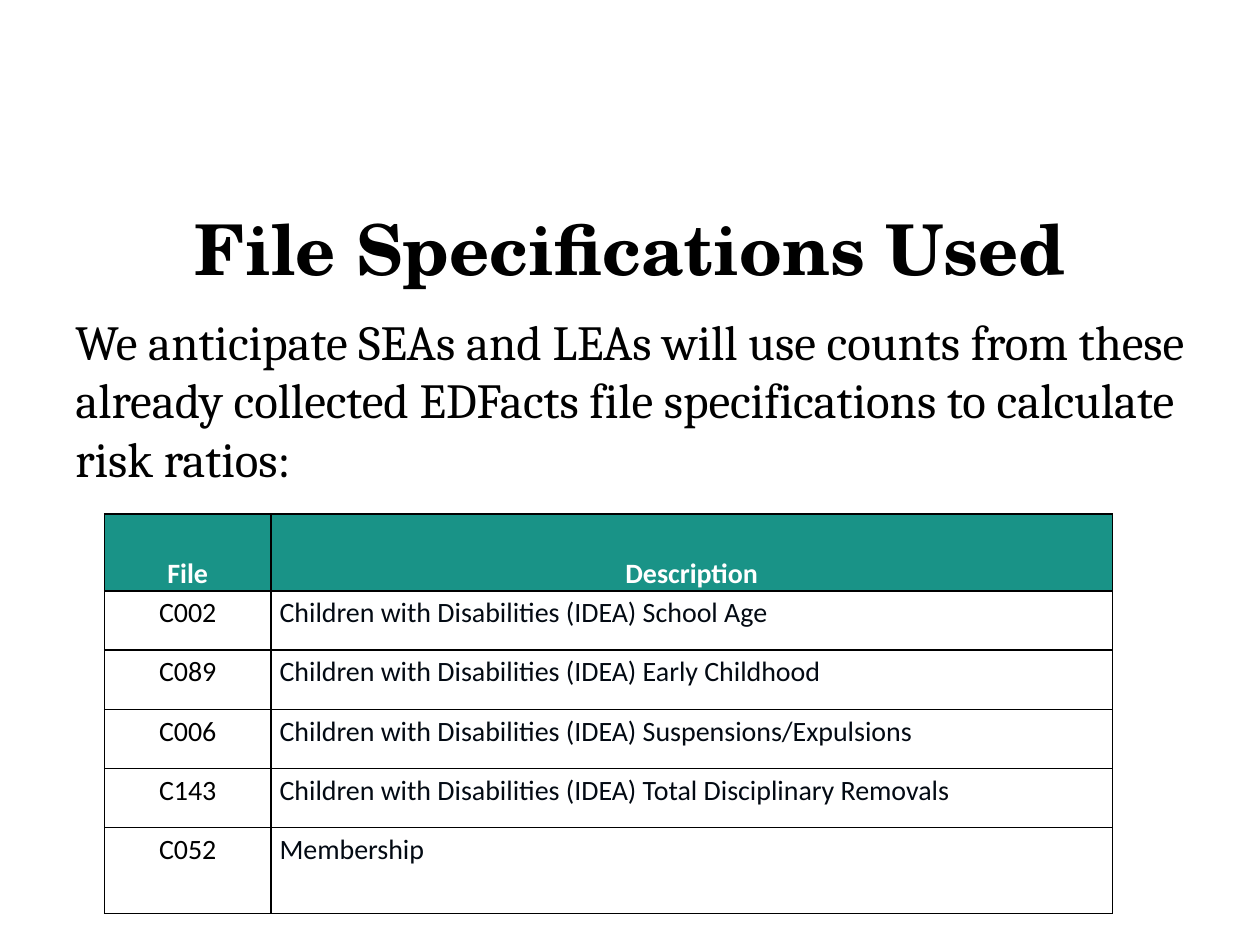
from dataclasses import dataclass

from lxml.etree import SubElement
from pptx import Presentation
from pptx.dml.color import RGBColor
from pptx.enum.text import MSO_ANCHOR, PP_ALIGN
from pptx.oxml.ns import qn
from pptx.util import Inches, Pt


@dataclass
class Style:
    """Hold the look of a run of text."""
    font: str
    size: int
    color: str
    bold: bool = False


@dataclass
class Entry:
    """Hold one file and what it covers."""
    code: str
    about: str


IDEA = "Children with Disabilities (IDEA) "
FILES = [
    Entry("C002", IDEA + "School Age"),
    Entry("C089", IDEA + "Early Childhood"),
    Entry("C006", IDEA + "Suspensions/Expulsions"),
    Entry("C143", IDEA + "Total Disciplinary Removals"),
    Entry("C052", "Membership"),
]
WIDTHS = [1.32, 6.68]
HEIGHTS = [0.61, 0.47, 0.47, 0.47, 0.47, 0.68]
HEAD = Style("Calibri", 16, "FFFFFF", True)
CODE = Style("Calibri", 16, "000000")
ABOUT = Style("Calibri", 16, "030A13")


def rgb(color: str) -> RGBColor:
    """Turn a hex string into a colour."""
    return RGBColor.from_string(color)


def write(para, text: str, style: Style, align=PP_ALIGN.LEFT) -> None:
    """Add one styled run to a paragraph."""
    para.alignment = align
    run = para.add_run()
    run.text = text
    font = run.font
    font.name, font.size, font.bold = style.font, Pt(style.size), style.bold
    font.color.rgb = rgb(style.color)


def add_text(slide, text: str, style: Style, top: float, height: float,
             align=PP_ALIGN.LEFT) -> None:
    """Add a wrapped text box across the slide."""
    box = slide.shapes.add_textbox(
        Inches(0.5), Inches(top), Inches(9), Inches(height))
    box.text_frame.word_wrap = True
    write(box.text_frame.paragraphs[0], text, style, align)


def rule(cell, color: str = "000000") -> None:
    """Draw thin lines on all four sides of a cell."""
    props = cell._tc.get_or_add_tcPr()
    for place, side in enumerate(("lnL", "lnR", "lnT", "lnB")):
        line = SubElement(props, qn(f"a:{side}"), w=str(Pt(1)))
        fill = SubElement(line, qn("a:solidFill"))
        SubElement(fill, qn("a:srgbClr"), val=color)
        props.insert(place, line)


def fill_cell(cell, text: str, style: Style, align, head: bool) -> None:
    """Set the text, fill and lines of a cell."""
    cell.margin_left = cell.margin_right = Inches(0.07)
    cell.margin_top = cell.margin_bottom = 0
    cell.vertical_anchor = MSO_ANCHOR.BOTTOM if head else MSO_ANCHOR.TOP
    if head:
        cell.fill.solid()
        cell.fill.fore_color.rgb = rgb("199387")
    else:
        cell.fill.background()
    para = cell.text_frame.paragraphs[0]
    para.line_spacing = 1.15
    write(para, text, style, align)
    rule(cell)


def add_files(slide) -> None:
    """Add the table of files."""
    rows = [Entry("File", "Description"), *FILES]
    table = slide.shapes.add_table(
        len(rows), len(WIDTHS), Inches(0.83), Inches(4.08),
        Inches(sum(WIDTHS)), Inches(sum(HEIGHTS))).table
    table.horz_banding = False
    for col, width in zip(table.columns, WIDTHS):
        col.width = Inches(width)
    for row, height in zip(table.rows, HEIGHTS):
        row.height = Inches(height)
    for index, entry in enumerate(rows):
        head = index == 0
        fill_cell(table.cell(index, 0), entry.code,
                  HEAD if head else CODE, PP_ALIGN.CENTER, head)
        fill_cell(table.cell(index, 1), entry.about,
                  HEAD if head else ABOUT,
                  PP_ALIGN.CENTER if head else PP_ALIGN.LEFT, head)


def main() -> None:
    """Build and save the slide."""
    deck = Presentation()
    deck.slide_width, deck.slide_height = Inches(10), Inches(7.5)
    slide = deck.slides.add_slide(deck.slide_layouts[6])
    add_text(slide, "File Specifications Used",
             Style("TeX Gyre Schola", 40, "000000", True),
             1.58, 1.25, PP_ALIGN.CENTER)
    add_text(slide, "We anticipate SEAs and LEAs will use counts from these "
             "already collected EDFacts file specifications to calculate "
             "risk ratios:", Style("Cambria", 28, "000000"), 2.42, 3.95)
    add_files(slide)
    deck.save("out.pptx")


if __name__ == "__main__":
    main()
